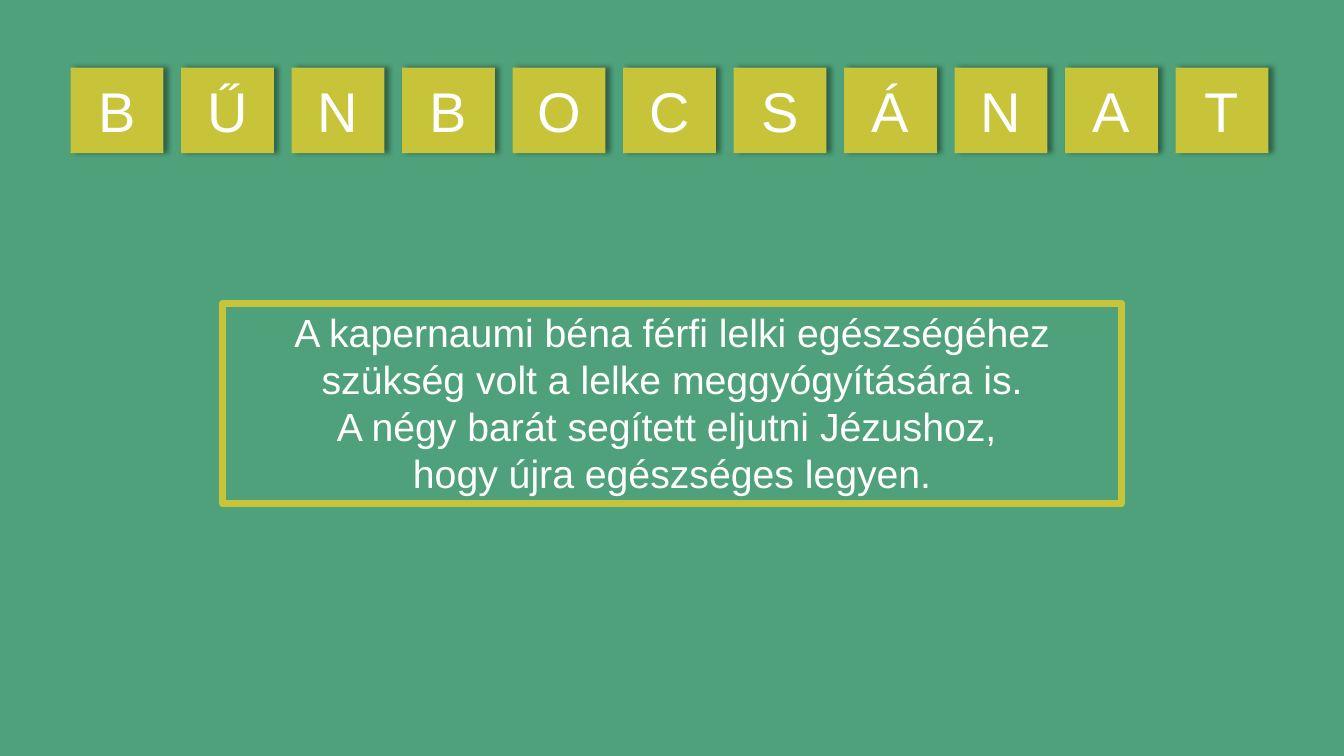
from dataclasses import dataclass

from lxml import etree
from pptx import Presentation
from pptx import util as u
from pptx.dml.color import RGBColor
from pptx.enum import shapes, text
from pptx.oxml.ns import qn


@dataclass(frozen=True)
class Theme:
    background: str = "4EA17A"
    accent: str = "C7C439"
    text: str = "FFFFFF"
    shadow: str = "000000"
    font: str = "Arial"
    letter_size: int = 40
    body_size: int = 28


THEME = Theme()
TITLE = "BŰNBOCSÁNAT"
MESSAGE = [
    "A kapernaumi béna férfi lelki egészségéhez szükség volt a lelke meggyógyítására is.",
    "A négy barát segített eljutni Jézushoz, ",
    "hogy újra egészséges legyen.",
]


def color(value):
    return RGBColor.from_string(value)


def add_rectangle(slide, left, top, width, height):
    shape = slide.shapes.add_shape(
        shapes.MSO_SHAPE.RECTANGLE,
        u.Inches(left), u.Inches(top), u.Inches(width), u.Inches(height),
    )
    shape.shadow.inherit = False
    return shape


def write_text(shape, lines, size, anchor):
    frame = shape.text_frame
    frame.word_wrap = True
    frame.vertical_anchor = anchor
    frame.text = "\n".join(lines)
    for paragraph in frame.paragraphs:
        paragraph.alignment = text.PP_ALIGN.CENTER
        for run in paragraph.runs:
            run.font.name = THEME.font
            run.font.size = u.Pt(size)
            run.font.color.rgb = color(THEME.text)


def add_shadow(shape, blur, distance, opacity):
    effects = shape._element.spPr.find(qn("a:effectLst"))
    shadow = etree.SubElement(
        effects, qn("a:outerShdw"),
        blurRad=str(u.Pt(blur)), dist=str(u.Pt(distance)), dir="0",
        algn="l", rotWithShape="0",
    )
    tone = etree.SubElement(shadow, qn("a:srgbClr"), val=THEME.shadow)
    etree.SubElement(tone, qn("a:alpha"), val=str(opacity * 1000))


def add_letter_tile(slide, letter, left):
    tile = add_rectangle(slide, left, 0.67, 0.92, 0.85)
    tile.fill.solid()
    tile.fill.fore_color.rgb = color(THEME.accent)
    tile.line.fill.background()
    add_shadow(tile, blur=4, distance=3, opacity=40)
    write_text(tile, [letter], THEME.letter_size, text.MSO_ANCHOR.MIDDLE)


def add_message_box(slide, lines):
    box = add_rectangle(slide, 2.21, 3.01, 8.91, 1.99)
    box.fill.background()
    box.line.color.rgb = color(THEME.accent)
    box.line.width = u.Pt(5)
    etree.SubElement(box.line._get_or_add_ln(), qn("a:round"))
    write_text(box, lines, THEME.body_size, text.MSO_ANCHOR.TOP)
    box.text_frame.auto_size = text.MSO_AUTO_SIZE.SHAPE_TO_FIT_TEXT


def main():
    presentation = Presentation()
    presentation.slide_width = u.Inches(13.33)
    presentation.slide_height = u.Inches(7.5)
    slide = presentation.slides.add_slide(presentation.slide_layouts[6])
    slide.background.fill.solid()
    slide.background.fill.fore_color.rgb = color(THEME.background)

    first_left, last_left = 0.7, 11.66
    step = (last_left - first_left) / (len(TITLE) - 1)
    for index, letter in enumerate(TITLE):
        add_letter_tile(slide, letter, first_left + index * step)
    add_message_box(slide, MESSAGE)

    presentation.save("out.pptx")


if __name__ == "__main__":
    main()
